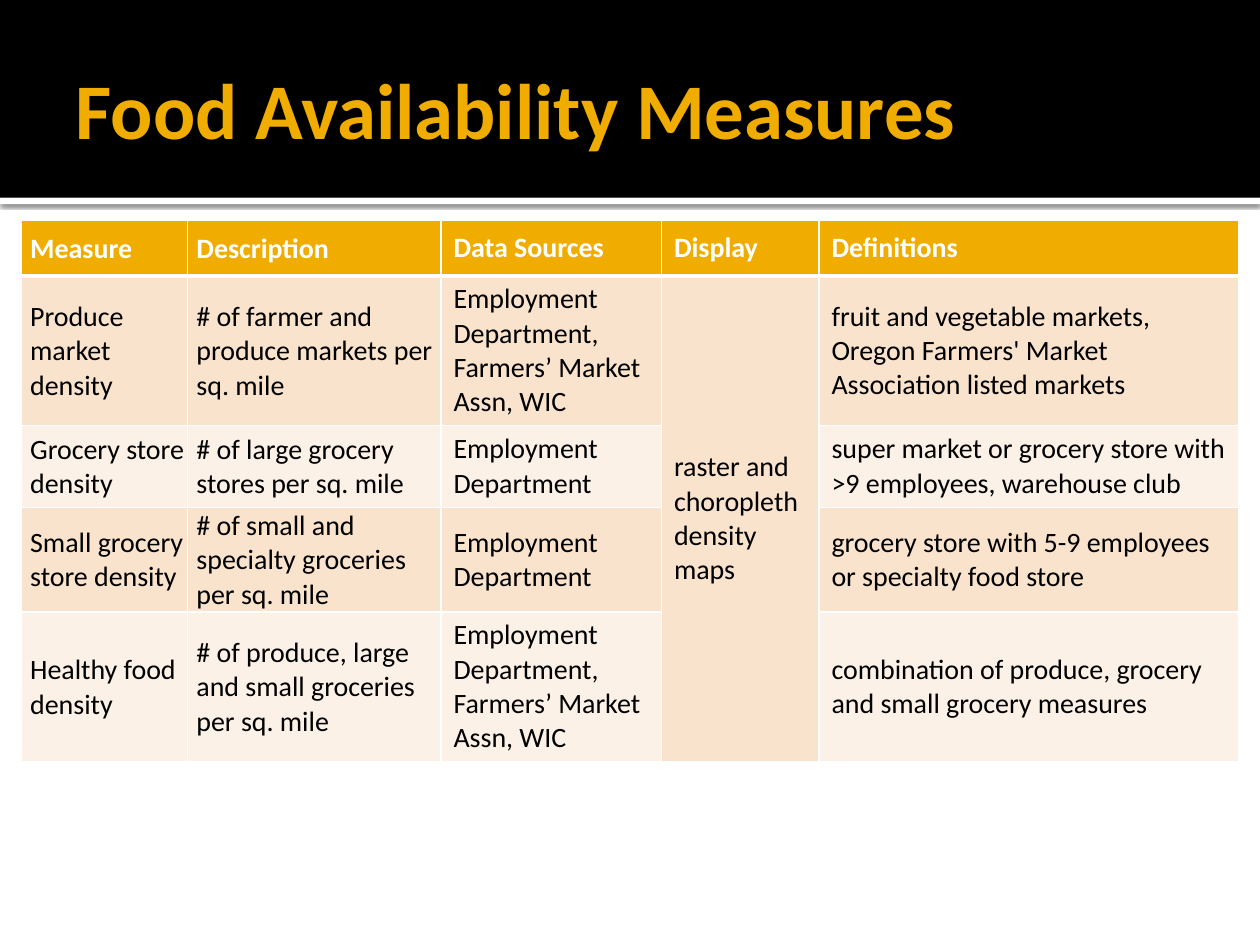
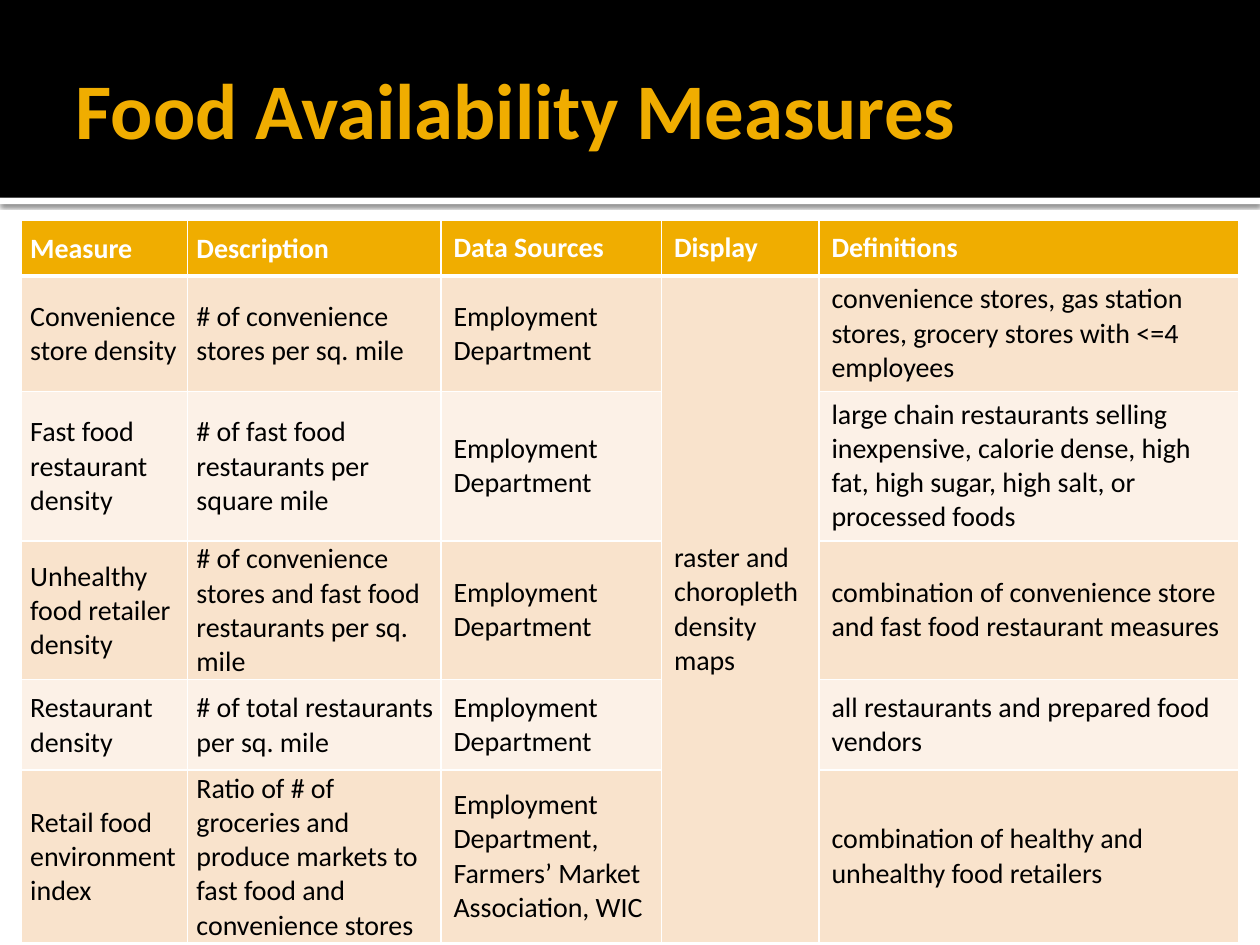
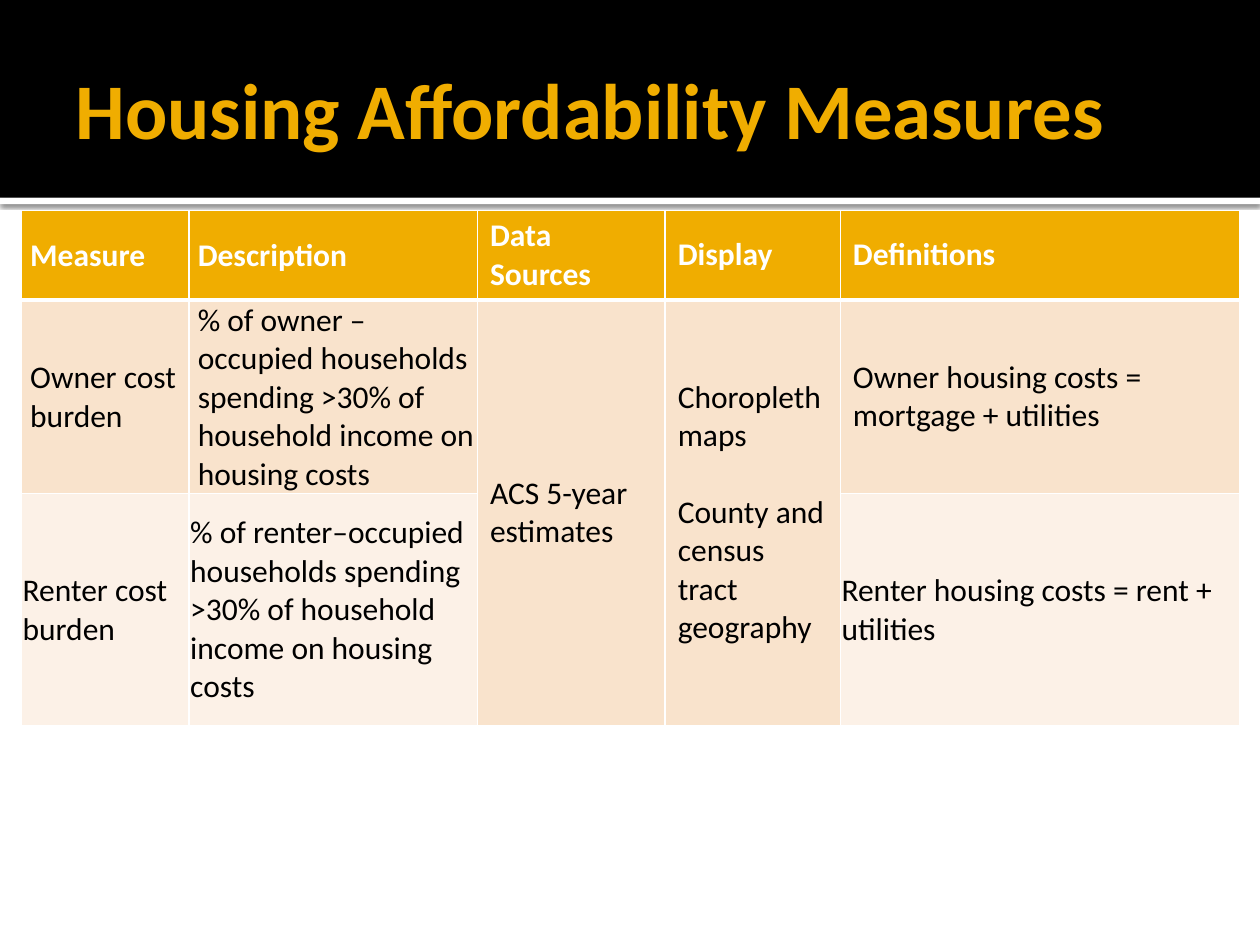
from lxml import etree
from pptx import Presentation
from pptx.dml.color import RGBColor
from pptx.enum.shapes import MSO_SHAPE
from pptx.enum.text import MSO_ANCHOR, MSO_AUTO_SIZE, PP_ALIGN
from pptx.oxml.ns import qn
from pptx.util import Inches, Pt

RECTANGLE = MSO_SHAPE.RECTANGLE
MIDDLE = MSO_ANCHOR.MIDDLE
LEFT = PP_ALIGN.LEFT
NO_AUTOFIT = MSO_AUTO_SIZE.NONE

FONT = "Calibri"
GOLD = RGBColor(0xF0, 0xAD, 0x00)
BLACK = RGBColor(0, 0, 0)
WHITE = RGBColor(255, 255, 255)
PEACH = RGBColor(0xF9, 0xE3, 0xCC)
CREAM = RGBColor(0xFC, 0xF1, 0xE7)

# Cell insets: left, top, right, bottom
ROOMY = (0.1, 0.05, 0.1, 0.05)
INDENTED = (0.07, 0.01, 0.01, 0)
FLUSH = (0.01, 0.01, 0.01, 0)

# Content; None continues the cell above, a line break starts a paragraph
HEADINGS = ("Measure", "Description", "Data Sources", "Display", "Definitions")
EMPLOYMENT = "Employment Department"
ALL_SOURCES = "Employment Department, Farmers’ Market Assn, WIC"
DENSITY_MAPS = "raster and choropleth density maps"
FOOD_TITLE = "Food Availability Measures"
FOOD_COLUMNS = (1.32, 2.01, 1.75, 1.25, 3.33)

SLIDES = [
    dict(
        title=FOOD_TITLE, top=1.75, size=16, columns=FOOD_COLUMNS,
        heights=(0.44, 1.18, 0.65, 0.83, 1.18),
        measures=[
            ("Produce market density", "# of farmer and produce markets per sq. mile",
             ALL_SOURCES, DENSITY_MAPS,
             "fruit and vegetable markets, Oregon Farmers' Market Association listed markets"),
            ("Grocery store density", "# of large grocery stores per sq. mile",
             EMPLOYMENT, None,
             "super market or grocery store with >9 employees, warehouse club"),
            ("Small grocery store density", "# of small and specialty groceries per sq. mile",
             EMPLOYMENT, None,
             "grocery store with 5-9 employees or specialty food store"),
            ("Healthy food density", "# of produce, large and small groceries per sq. mile",
             ALL_SOURCES, None,
             "combination of produce, grocery and small grocery measures"),
        ],
    ),
    dict(
        title=FOOD_TITLE, top=1.75, size=16, columns=FOOD_COLUMNS,
        heights=(0.44, 0.91, 1.18, 1.1, 0.72, 1.37),
        measures=[
            ("Convenience store density", "# of convenience stores per sq. mile",
             EMPLOYMENT, DENSITY_MAPS,
             "convenience stores, gas station stores, grocery stores with <=4 employees"),
            ("Fast food restaurant density", "# of fast food restaurants per square mile",
             EMPLOYMENT, None,
             "large chain restaurants selling inexpensive, calorie dense, high fat, "
             "high sugar, high salt, or processed foods"),
            ("Unhealthy food retailer density",
             "# of convenience stores and fast food restaurants per sq. mile",
             EMPLOYMENT, None,
             "combination of convenience store and fast food restaurant measures"),
            ("Restaurant density", "# of total restaurants per sq. mile",
             EMPLOYMENT, None, "all restaurants and prepared food vendors"),
            ("Retail food environment index",
             "Ratio of # of groceries and produce markets to fast food and convenience stores",
             "Employment Department,\nFarmers’ Market Association, WIC", None,
             "combination of healthy and unhealthy food retailers"),
        ],
    ),
    dict(
        title="Housing Affordability Measures", top=1.67, size=18,
        columns=(1.33, 2.29, 1.49, 1.39, 3.17), heights=(0.71, 1.53, 1.84),
        flush_row=2, paragraph_gap=22,
        measures=[
            ("Owner cost burden",
             "% of owner –occupied households spending >30% of household income on housing costs",
             "ACS 5-year estimates",
             "Choropleth maps\nCounty and census tract geography",
             "Owner housing costs = mortgage + utilities"),
            ("Renter cost burden",
             "% of renter–occupied households spending >30% of household income on housing costs",
             None, None, "Renter housing costs = rent + utilities"),
        ],
    ),
]


def set_insets(target, insets):
    left, top, right, bottom = map(Inches, insets)
    target.margin_left, target.margin_top = left, top
    target.margin_right, target.margin_bottom = right, bottom


def style_text(paragraph, size, color, bold):
    paragraph.alignment = LEFT
    font = paragraph.font
    font.name, font.size, font.bold = FONT, Pt(size), bold
    font.color.rgb = color


def add_band(slide, top, height, color):
    """Add a full-width band behind the title."""
    band = slide.shapes.add_shape(RECTANGLE, 0, Inches(top), Inches(10), Inches(height))
    band.shadow.inherit = False
    band.fill.solid()
    band.fill.fore_color.rgb = color
    band.line.fill.background()
    slide.shapes.title.element.addprevious(band.element)
    return band


def add_soft_shadow(shape):
    effects = shape.element.spPr.find(qn("a:effectLst"))
    shadow = etree.SubElement(effects, qn("a:outerShdw"), blurRad=str(Pt(2.5)),
                              dist=str(Pt(0.8)), dir="5400000", rotWithShape="0")
    black = etree.SubElement(shadow, qn("a:srgbClr"), val=str(BLACK))
    etree.SubElement(black, qn("a:alpha"), val="60000")


def add_header(slide, text):
    add_soft_shadow(add_band(slide, 1.57, 0.05, WHITE))
    add_band(slide, 0, 1.57, BLACK)
    title = slide.shapes.title
    title.left, title.top = Inches(0.5), Inches(0.17)
    title.width, title.height = Inches(9), Inches(1.37)
    frame = title.text_frame
    frame.text = text
    frame.auto_size = NO_AUTOFIT
    frame.vertical_anchor = MIDDLE
    set_insets(frame, (0.1, 0.05, 0.05, 0.05))
    style_text(frame.paragraphs[0], 45, GOLD, True)


def set_borders(cell, row):
    """White rules, thicker between the headings and the first measure."""
    widths = {"lnL": 1, "lnR": 1, "lnT": 3 if row == 1 else 1, "lnB": 3 if row == 0 else 1}
    properties = cell._tc.get_or_add_tcPr()
    for side, width in widths.items():
        line = etree.SubElement(properties, qn(f"a:{side}"), w=str(Pt(width)))
        fill = etree.SubElement(line, qn("a:solidFill"))
        etree.SubElement(fill, qn("a:srgbClr"), val=str(WHITE))


def add_measures(slide, content):
    rows = [HEADINGS] + content["measures"]
    columns, heights = content["columns"], content["heights"]
    table = slide.shapes.add_table(
        len(rows), len(columns), Inches(0.17), Inches(content["top"]),
        Inches(sum(columns)), Inches(sum(heights))).table
    for column, width in zip(table.columns, columns):
        column.width = Inches(width)
    for row, height in zip(table.rows, heights):
        row.height = Inches(height)

    for r, texts in enumerate(rows):
        for c, text in enumerate(texts):
            cell = table.cell(r, c)
            set_borders(cell, r)
            cell.fill.solid()
            cell.fill.fore_color.rgb = GOLD if r == 0 else PEACH if r % 2 else CREAM
            if text is None:
                continue
            cell.vertical_anchor = MIDDLE
            flush = r == content.get("flush_row")
            set_insets(cell, FLUSH if flush else INDENTED if c < 2 else ROOMY)
            cell.text = text
            for i, paragraph in enumerate(cell.text_frame.paragraphs):
                style_text(paragraph, content["size"], BLACK if r else WHITE, r == 0)
                if i:
                    paragraph.space_before = Pt(content.get("paragraph_gap", 0))

    # Columns whose value is shared by all measures
    for c, text in enumerate(rows[-1]):
        if text is None:
            table.cell(1, c).merge(table.cell(len(rows) - 1, c))


def main():
    deck = Presentation()
    deck.slide_width, deck.slide_height = Inches(10), Inches(7.5)
    title_only = deck.slide_layouts[5]
    for content in SLIDES:
        slide = deck.slides.add_slide(title_only)
        add_header(slide, content["title"])
        add_measures(slide, content)
    deck.save("out.pptx")


if __name__ == "__main__":
    main()
